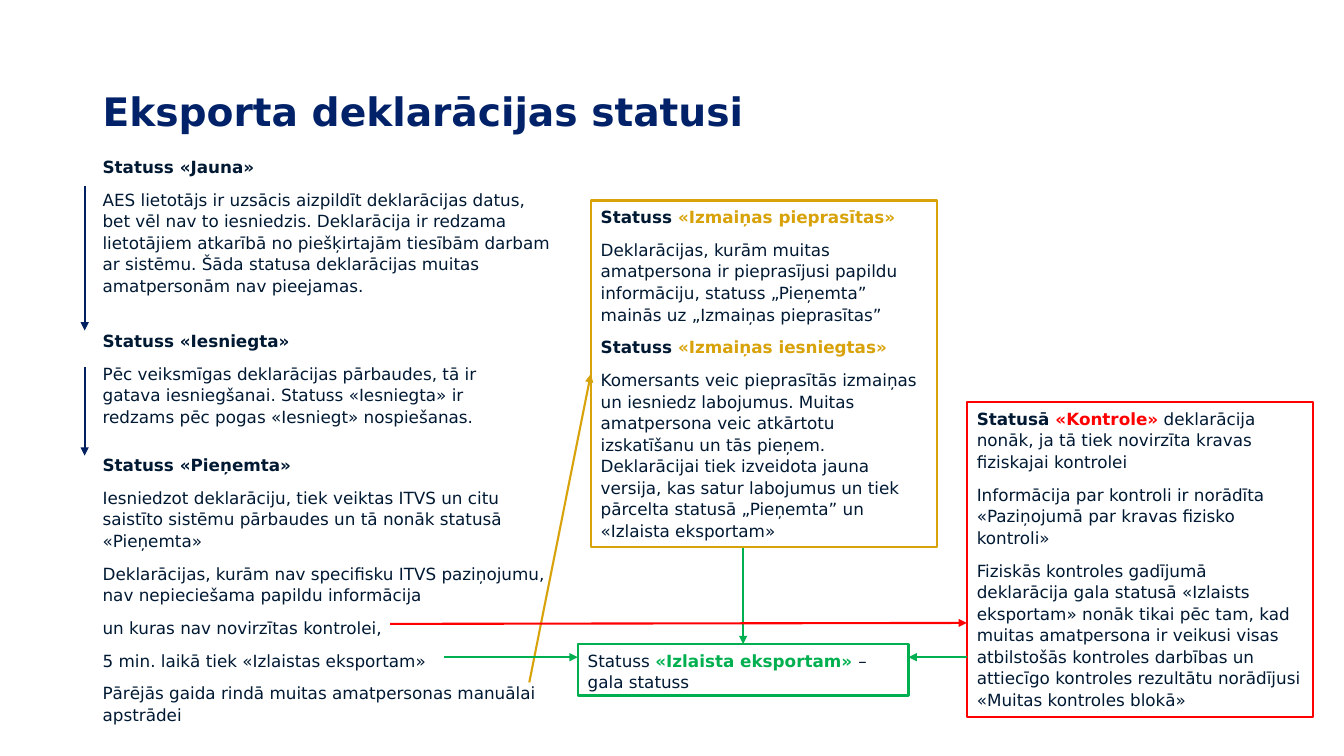
from lxml import etree
from pptx import Presentation
from pptx import util as u
from pptx.dml.color import RGBColor
from pptx.enum import shapes, text
from pptx.oxml.ns import qn

INK, TITLE, NAVY = "001933", "012269", "002060"
GOLD, GREEN, RED = "D8A20A", "00B050", "FF0000"

presentation = Presentation()
presentation.slide_width = u.Inches(13.33)
presentation.slide_height = u.Inches(7.5)
slide = presentation.slides.add_slide(presentation.slide_layouts[6])


def place(*shares):
    """Turn alternating percentages of slide width and height into lengths."""
    sides = (presentation.slide_width, presentation.slide_height)
    return [u.Emu(round(share * sides[i % 2] / 100)) for i, share in enumerate(shares)]


def add_text(paragraphs, area, border=None, size=12, spacing=1.07, after=8,
             anchor=text.MSO_ANCHOR.TOP, fit=text.MSO_AUTO_SIZE.SHAPE_TO_FIT_TEXT):
    """Add a box; each paragraph is a list of (words, colour, bold) runs."""
    if border:
        shape = slide.shapes.add_shape(shapes.MSO_SHAPE.RECTANGLE, *place(*area))
        shape.shadow.inherit = False
        shape.fill.background()
        shape.line.color.rgb = RGBColor.from_string(border)
        shape.line.width = u.Pt(1.5)
    else:
        shape = slide.shapes.add_textbox(*place(*area))
    frame = shape.text_frame
    frame.word_wrap = True
    frame.auto_size = fit
    frame.vertical_anchor = anchor
    for number, runs in enumerate(paragraphs):
        paragraph = frame.add_paragraph() if number else frame.paragraphs[0]
        paragraph.alignment = text.PP_ALIGN.LEFT
        paragraph.line_spacing = spacing
        paragraph.space_after = u.Pt(after)
        for words, colour, bold in runs:
            run = paragraph.add_run()
            run.text = words
            run.font.name = "DejaVu Sans"
            run.font.size = u.Pt(size)
            run.font.bold = bold
            run.font.color.rgb = RGBColor.from_string(colour)
    return shape


LEFT, CHANGES_LEFT, CONTROL_LEFT, FINAL_LEFT = 6.9, 43.96, 71.94, 42.99
BOX_WIDTH, FINAL_WIDTH, FINAL_TOP = 25.73, 24.61, 85.2

add_text([[("Eksporta deklarācijas statusi", TITLE, True)]], (LEFT, 5.33, 86.27, 19.33),
         size=28, spacing=0.9, after=0, anchor=text.MSO_ANCHOR.MIDDLE,
         fit=text.MSO_AUTO_SIZE.NONE)

# Statuses in the left column: top, width, height, heading, body paragraphs
statuses = [
    (19.87, 34.88, 19.87, "Statuss «Jauna»", [
        "AES lietotājs ir uzsācis aizpildīt deklarācijas datus, bet vēl nav to iesniedzis. "
        "Deklarācija ir redzama lietotājiem atkarībā no piešķirtajām tiesībām darbam ar "
        "sistēmu. Šāda statusa deklarācijas muitas amatpersonām nav pieejamas."]),
    (42.93, 33.53, 14.13, "Statuss «Iesniegta»", [
        "Pēc veiksmīgas deklarācijas pārbaudes, tā ir gatava iesniegšanai. "
        "Statuss «Iesniegta» ir redzams pēc pogas «Iesniegt» nospiešanas."]),
    (59.33, 34.88, 41.73, "Statuss «Pieņemta»", [
        "Iesniedzot deklarāciju, tiek veiktas ITVS un citu saistīto sistēmu pārbaudes "
        "un tā nonāk statusā «Pieņemta»",
        "Deklarācijas, kurām nav specifisku ITVS paziņojumu, nav nepieciešama papildu "
        "informācija",
        "un kuras nav novirzītas kontrolei,",
        "5 min. laikā tiek «Izlaistas eksportam»",
        "Pārējās gaida rindā muitas amatpersonas manuālai apstrādei"]),
]
for top, width, height, heading, body in statuses:
    add_text([[(heading, INK, True)]] + [[(words, INK, False)] for words in body],
             (LEFT, top, width, height))

final_box = add_text([
    [("Statuss ", INK, False), ("«Izlaista eksportam» ", GREEN, True),
     ("– gala statuss", INK, False)],
], (FINAL_LEFT, FINAL_TOP, FINAL_WIDTH, 6.8), border=GREEN)

changes_box = add_text([
    [("Statuss ", INK, True), ("«Izmaiņas pieprasītas»", GOLD, True)],
    [("Deklarācijas, kurām muitas amatpersona ir pieprasījusi papildu informāciju, "
      "statuss „Pieņemta” mainās uz „Izmaiņas pieprasītas”", INK, False)],
    [("Statuss ", INK, True), ("«Izmaiņas iesniegtas»", GOLD, True)],
    [("Komersants veic pieprasītās izmaiņas un iesniedz labojumus. Muitas amatpersona "
      "veic atkārtotu izskatīšanu un tās pieņem. Deklarācijai tiek izveidota jauna "
      "versija, kas satur labojumus un tiek pārcelta statusā „Pieņemta” un "
      "«Izlaista eksportam»", INK, False)],
], (CHANGES_LEFT, 26.53, BOX_WIDTH, 45.87), border=GOLD)

add_text([
    [("Statusā ", INK, True), ("«Kontrole»", RED, True),
     (" deklarācija nonāk, ja tā tiek novirzīta kravas fiziskajai kontrolei", INK, False)],
    [("Informācija par kontroli ir norādīta «Paziņojumā par kravas fizisko kontroli»",
      INK, False)],
    [("Fiziskās kontroles gadījumā deklarācija gala statusā «Izlaists eksportam» nonāk "
      "tikai pēc tam, kad muitas amatpersona ir veikusi visas atbilstošās kontroles "
      "darbības un attiecīgo kontroles rezultātu norādījusi «Muitas kontroles blokā»",
      INK, False)],
], (CONTROL_LEFT, 53.2, BOX_WIDTH, 41.6), border=RED)

# Arrows: start and end, colour, and the box side (if any) where the end is joined
STEP_X, RELEASE_Y = 6.3, 86.93
FINAL_MIDDLE = FINAL_LEFT + FINAL_WIDTH / 2
arrows = [
    ((STEP_X, 24.67, STEP_X, 43.73), NAVY, None),
    ((STEP_X, 48.53, STEP_X, 60.27), NAVY, None),
    ((39.38, 90.27, CHANGES_LEFT, 49.6), GOLD, (changes_box, 1)),
    ((FINAL_MIDDLE, 72.53, FINAL_MIDDLE, FINAL_TOP), GREEN, (final_box, 0)),
    ((29.03, 82.53, CONTROL_LEFT, 82.4), RED, None),
    ((CONTROL_LEFT, RELEASE_Y, FINAL_LEFT + FINAL_WIDTH, RELEASE_Y), GREEN, None),
    ((33.01, RELEASE_Y, FINAL_LEFT, RELEASE_Y), GREEN, None),
]
for ends, colour, joint in arrows:
    arrow = slide.shapes.add_connector(shapes.MSO_CONNECTOR.STRAIGHT, *place(*ends))
    if joint:
        arrow.end_connect(*joint)
    arrow.line.color.rgb = RGBColor.from_string(colour)
    arrow.line.width = u.Pt(1.5)
    properties = arrow.element.spPr
    etree.SubElement(properties.find(qn("a:ln")), qn("a:tailEnd"), type="triangle")
    etree.SubElement(properties, qn("a:effectLst"))

presentation.save("out.pptx")
